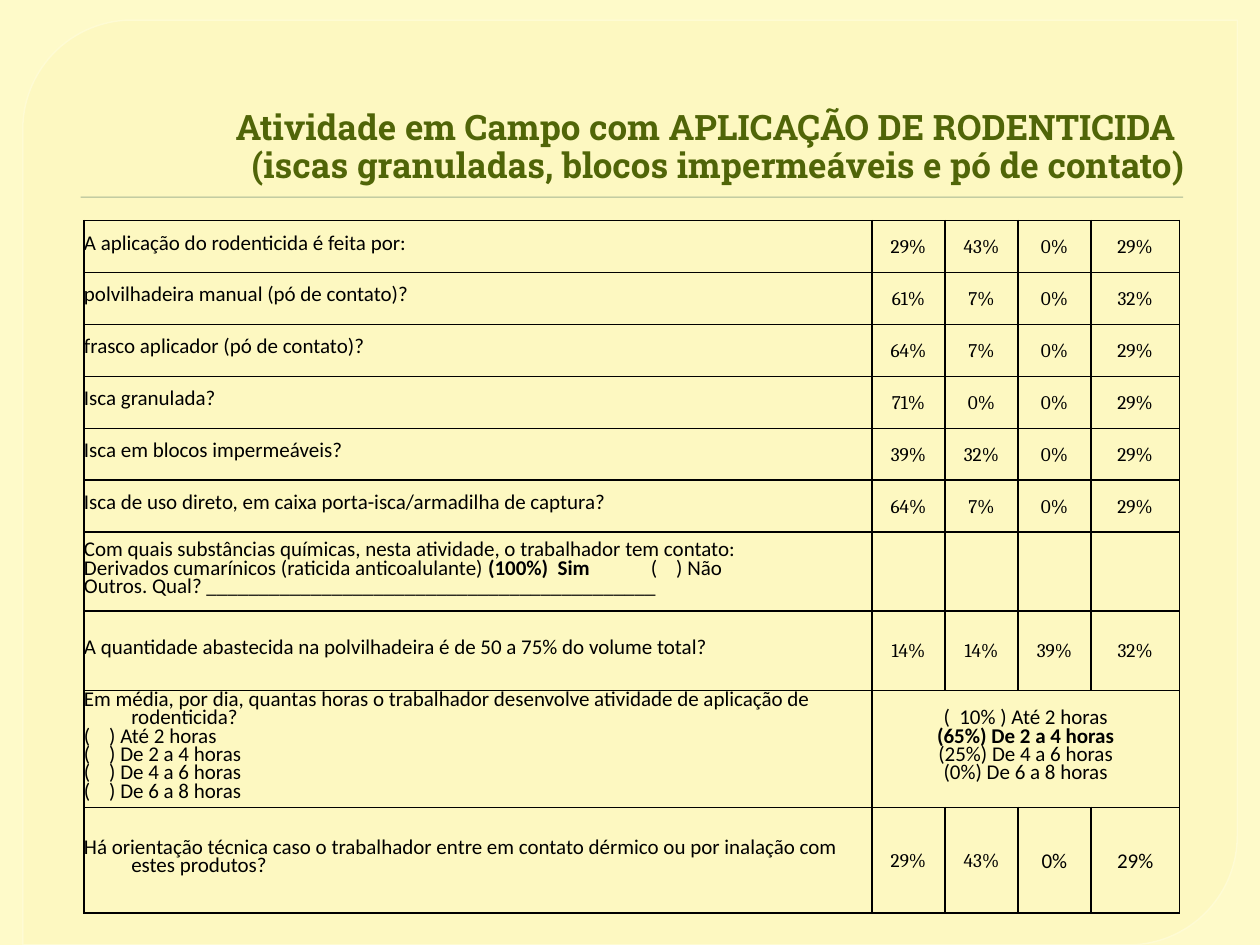
from dataclasses import dataclass

import pptx
import pptx.dml.color
import pptx.enum.shapes
import pptx.enum.text
import pptx.oxml.ns
import pptx.oxml.xmlchemy
import pptx.util
from lxml import etree

Pt = pptx.util.Pt
RGBColor = pptx.dml.color.RGBColor
Align = pptx.enum.text.PP_ALIGN
Anchor = pptx.enum.text.MSO_ANCHOR
Preset = pptx.enum.shapes.MSO_SHAPE
qn = pptx.oxml.ns.qn

BACKGROUND = RGBColor(0xFE, 0xFA, 0xC9)
PANEL = RGBColor(0xFD, 0xF8, 0xBE)
PANEL_LINE = RGBColor(0xFF, 0xFC, 0xD6)
RULE = RGBColor(0xA5, 0xB5, 0x92)
TITLE = RGBColor(0x50, 0x65, 0x08)
BLACK = RGBColor(0, 0, 0)

LABEL_HANGING = 27
OPTION_HANGING = 18
EXACT_SPACING = Pt(10.5)
COLUMN_WIDTHS = (450.3, 41.7, 41.7, 41.7, 50.6)


@dataclass(frozen=True)
class Line:
    text: str
    hanging: float = LABEL_HANGING
    bold: bool = False
    spacing: int | float = EXACT_SPACING
    alignment: Align = Align.LEFT
    font: str = "Calibri"
    size: float = 12


@dataclass(frozen=True)
class Row:
    height: float
    label: tuple[Line, ...]
    values: tuple[Line, ...] = ()
    merged: tuple[Line, ...] = ()


def percent(text: str, font: str = "Cambria", size: float = 11) -> Line:
    return Line(text, OPTION_HANGING, False, 1.07, Align.CENTER, font, size)


def percents(*numbers: int) -> tuple[Line, ...]:
    return tuple(percent(f"{number}%") for number in numbers)


def answer(text: str, bold: bool = False) -> Line:
    return Line(text, OPTION_HANGING, bold, alignment=Align.CENTER)


HOURS = ("Até 2 horas", "De 2 a 4 horas", "De 4 a 6 horas", "De 6 a 8 horas")
SUBSTANCES = Line("Derivados cumarínicos (raticida anticoalulante) ", hanging=0)
ROWS = (
    Row(29.7, (Line("A aplicação do rodenticida é feita por:", spacing=Pt(11.5)),),
        percents(29, 43, 0, 29)),
    Row(29.7, (Line("polvilhadeira manual (pó de contato)?"),), percents(61, 7, 0, 32)),
    Row(29.7, (Line("frasco aplicador (pó de contato)?"),), percents(64, 7, 0, 29)),
    Row(29.7, (Line("Isca granulada?"),), percents(71, 0, 0, 29)),
    Row(29.7, (Line("Isca em blocos impermeáveis?"),), percents(39, 32, 0, 29)),
    Row(29.7, (Line("Isca de uso direto, em caixa porta-isca/armadilha de captura?"),),
        percents(64, 7, 0, 29)),
    Row(45.2, (
        Line("Com quais substâncias químicas, nesta atividade, o trabalhador tem contato:"),
        SUBSTANCES,
        Line("Outros. Qual? " + "_" * 43))),
    Row(45.2, (Line("A quantidade abastecida na polvilhadeira é de 50 a 75% do volume total?"),),
        percents(14, 14, 39, 32)),
    Row(66.9, (
        Line("Em média, por dia, quantas horas o trabalhador desenvolve atividade "
             "de aplicação de rodenticida?"),
        *(Line(f"(    ) {hours}", OPTION_HANGING) for hours in HOURS)),
        merged=tuple(
            answer(f"{share} {hours}", bold=share == "(65%)")
            for share, hours in zip(("(  10% )", "(65%)", "(25%)", "(0%)"), HOURS))),
    Row(60.4, (Line("Há orientação técnica caso o trabalhador entre em contato dérmico "
                    "ou por inalação com estes produtos?"),),
        (*percents(29, 43), percent("0%", "Calibri", 12), percent("29%", "Calibri", 12))),
)


def add_text(paragraph, text: str, *, font: str = "Calibri", size: float = 12,
             bold: bool = False, color: RGBColor = BLACK) -> None:
    run = paragraph.add_run()
    run.text = text
    run.font.name = font
    run.font.size = Pt(size)
    run.font.bold = bold
    run.font.color.rgb = color


def add_element(parent, tag: str, **attributes: str):
    return etree.SubElement(parent, qn(tag), attributes)


def set_alpha(color_parent, percentage: int) -> None:
    color = color_parent.find(".//" + qn("a:srgbClr"))
    add_element(color, "a:alpha", val=str(percentage * 1000))


def add_tab_stop(paragraph, position: float) -> None:
    tabs = add_element(paragraph._p.get_or_add_pPr(), "a:tabLst")
    add_element(tabs, "a:tab", pos=str(Pt(position)), algn="l")


def set_indent(paragraph, hanging: float) -> None:
    properties = paragraph._p.get_or_add_pPr()
    properties.set("marL", str(Pt(hanging)))
    properties.set("indent", str(-Pt(hanging)))


def write_lines(text_frame, lines: tuple[Line, ...]) -> None:
    for index, line in enumerate(lines):
        paragraph = text_frame.paragraphs[0] if index == 0 else text_frame.add_paragraph()
        set_indent(paragraph, line.hanging)
        if line is SUBSTANCES:
            add_tab_stop(paragraph, 302.8)
        paragraph.alignment = line.alignment
        paragraph.line_spacing = line.spacing
        add_text(paragraph, line.text, font=line.font, size=line.size, bold=line.bold)
        if line is SUBSTANCES:
            add_text(paragraph, "(100%)  Sim", bold=True)
            add_text(paragraph, "\t(    ) Não")


def format_cell(cell) -> None:
    cell.margin_left = cell.margin_right = cell.margin_top = cell.margin_bottom = 0
    cell.vertical_anchor = Anchor.MIDDLE
    cell.fill.background()
    properties = cell._tc.get_or_add_tcPr()
    for index, side in enumerate(("a:lnL", "a:lnR", "a:lnT", "a:lnB")):
        border = add_element(properties, side, w=str(Pt(1)))
        fill = add_element(border, "a:solidFill")
        add_element(fill, "a:srgbClr", val=str(BLACK))
        properties.insert(index, border)


def add_table(slide) -> None:
    frame = slide.shapes.add_table(
        len(ROWS), len(COLUMN_WIDTHS), Pt(48), Pt(126),
        Pt(sum(COLUMN_WIDTHS)), Pt(sum(row.height for row in ROWS)))
    table = frame.table
    table.first_row = table.horz_banding = False
    for column, width in zip(table.columns, COLUMN_WIDTHS):
        column.width = Pt(width)
    for index, row in enumerate(ROWS):
        table.rows[index].height = Pt(row.height)
        cells = table.rows[index].cells
        for cell in cells:
            format_cell(cell)
        write_lines(table.cell(index, 0).text_frame, row.label)
        for column, value in enumerate(row.values, start=1):
            write_lines(table.cell(index, column).text_frame, (value,))
        if row.merged:
            table.cell(index, 1).merge(table.cell(index, len(COLUMN_WIDTHS) - 1))
            write_lines(table.cell(index, 1).text_frame, row.merged)


def add_block(slide, preset: Preset, left: float, top: float, width: float,
              height: float, color: RGBColor):
    shape = slide.shapes.add_shape(preset, Pt(left), Pt(top), Pt(width), Pt(height))
    shape.shadow.inherit = False
    shape.fill.solid()
    shape.fill.fore_color.rgb = color
    shape.line.fill.background()
    return shape


def add_backdrop(slide) -> None:
    slide.background.fill.solid()
    slide.background.fill.fore_color.rgb = BACKGROUND
    panel = add_block(slide, Preset.ROUND_2_DIAG_RECTANGLE, 13, 11.5, 694, 528.5, PANEL)
    panel.adjustments[0] = 0.118
    panel.adjustments[1] = 0
    set_alpha(panel._element.spPr.find(qn("a:solidFill")), 65)
    panel.line.color.rgb = PANEL_LINE
    panel.line.width = Pt(0.87)
    set_alpha(panel._element.spPr.find(qn("a:ln")), 88)
    rule = add_block(slide, Preset.RECTANGLE, 46.1, 112.3, 630, 0.7, RULE)
    effects = rule._element.spPr.find(qn("a:effectLst"))
    shadow = add_element(effects, "a:outerShdw", blurRad=str(Pt(1)), dist=str(Pt(1)),
                         dir="5400000", rotWithShape="0")
    add_element(shadow, "a:srgbClr", val=str(BLACK))
    set_alpha(shadow, 75)


def add_title(slide) -> None:
    text_frame = slide.shapes.add_textbox(Pt(36), Pt(20), Pt(648), Pt(90)).text_frame
    text_frame.word_wrap = True
    text_frame.vertical_anchor = Anchor.BOTTOM
    paragraph = text_frame.paragraphs[0]
    paragraph.alignment = Align.RIGHT
    paragraph.line_spacing = 0.9
    style = dict(font="Roboto Slab", size=20, bold=True, color=TITLE)
    add_text(paragraph, "Atividade em Campo com APLICAÇÃO DE RODENTICIDA ", **style)
    paragraph.add_line_break()
    add_text(paragraph, "(iscas granuladas, blocos impermeáveis e pó de contato)", **style)


def main() -> None:
    presentation = pptx.Presentation()
    presentation.slide_width = Pt(720)
    presentation.slide_height = Pt(540)
    slide = presentation.slides.add_slide(presentation.slide_layouts[6])
    add_backdrop(slide)
    add_title(slide)
    add_table(slide)
    presentation.save("out.pptx")


if __name__ == "__main__":
    main()
